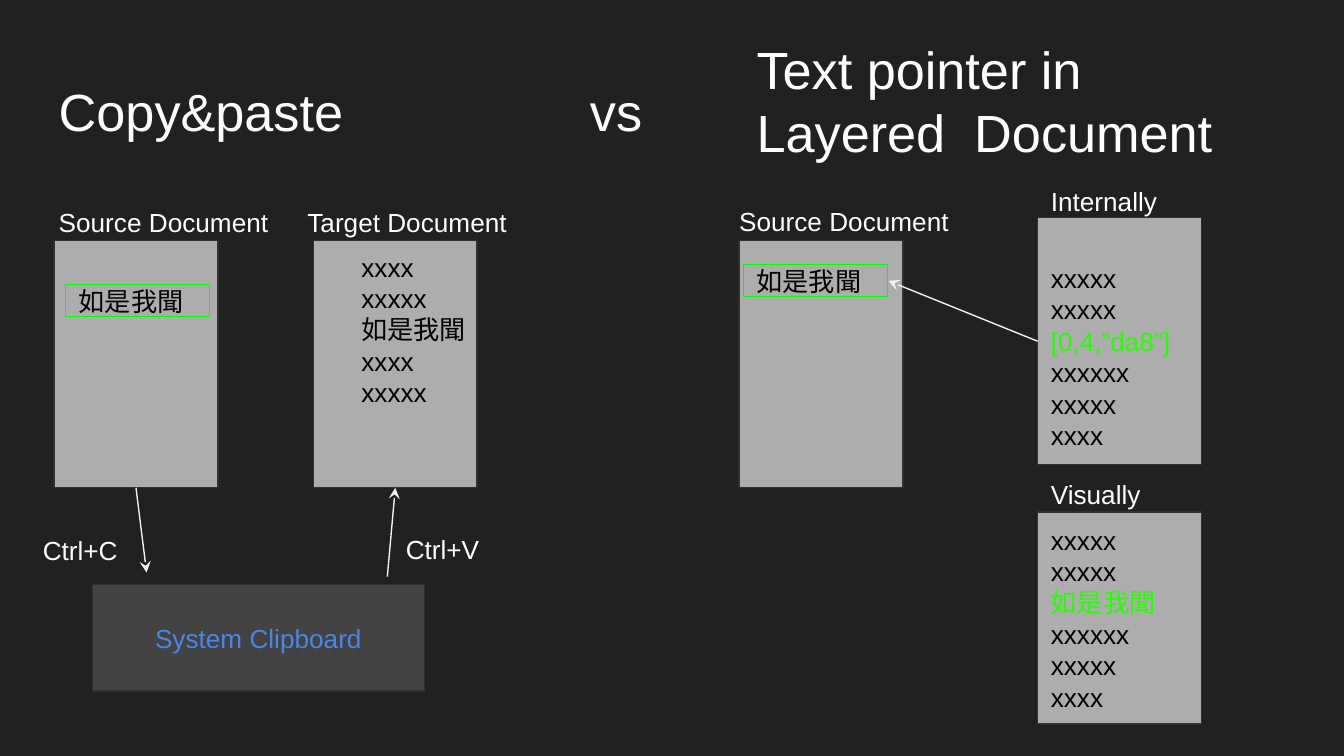
from typing import NamedTuple, Optional

from lxml.etree import SubElement
from pptx import Presentation
from pptx.dml.color import RGBColor
from pptx.enum.shapes import MSO_CONNECTOR, MSO_SHAPE
from pptx.enum.text import MSO_ANCHOR, MSO_AUTO_SIZE, PP_ALIGN
from pptx.oxml.ns import qn
from pptx.util import Cm, Pt

BACKGROUND = RGBColor(0x21, 0x21, 0x21)
WHITE = RGBColor(0xFF, 0xFF, 0xFF)
BLACK = RGBColor(0x00, 0x00, 0x00)
SHEET_GREY = RGBColor(0xAD, 0xAD, 0xAD)
PANEL_GREY = RGBColor(0x43, 0x43, 0x43)
EDGE_GREY = RGBColor(0x30, 0x30, 0x30)
ARROW_GREY = RGBColor(0xF3, 0xF3, 0xF3)
QUOTE_EDGE = RGBColor(0x00, 0xFF, 0x00)
QUOTE_GREEN = RGBColor(0x24, 0xFF, 0x00)
CLIPBOARD_BLUE = RGBColor(0x4A, 0x86, 0xE8)

FONT = "Arial"
INSET = 0.25
SHEET_WIDTH, SHEET_HEIGHT = 3.1, 4.67
QUOTE = "如是我聞"


class Line(NamedTuple):
    text: str
    color: RGBColor = BLACK


class Area(NamedTuple):
    """A rectangle in centimetres."""
    left: float
    top: float
    width: float
    height: float

    def lengths(self) -> list[Cm]:
        return [Cm(value) for value in self]


class Block(NamedTuple):
    """A filled rectangle with optional text."""
    area: Area
    lines: tuple[Line, ...] = ()
    fill: RGBColor = SHEET_GREY
    edge: RGBColor = EDGE_GREY
    align: PP_ALIGN = PP_ALIGN.LEFT
    inset_top: float = INSET
    inset_bottom: float = INSET


class Arrow(NamedTuple):
    start: tuple[float, float]
    end: tuple[float, float]


def write(box, lines: tuple[Line, ...], size: int = 14,
          anchor: MSO_ANCHOR = MSO_ANCHOR.TOP,
          align: PP_ALIGN = PP_ALIGN.LEFT,
          inset_top: float = INSET, inset_bottom: float = INSET) -> None:
    frame = box.text_frame
    frame.word_wrap = True
    frame.auto_size = MSO_AUTO_SIZE.NONE
    frame.vertical_anchor = anchor
    frame.margin_left = frame.margin_right = Cm(INSET)
    frame.margin_top, frame.margin_bottom = Cm(inset_top), Cm(inset_bottom)
    for index, line in enumerate(lines):
        para = frame.add_paragraph() if index else frame.paragraphs[0]
        para.alignment = align
        span = para.add_run()
        span.text = line.text
        span.font.name = FONT
        span.font.size = Pt(size)
        span.font.color.rgb = line.color


def add_text(page, area: Area, lines: tuple[Line, ...], size: int = 14,
             anchor: MSO_ANCHOR = MSO_ANCHOR.TOP) -> None:
    write(page.shapes.add_textbox(*area.lengths()), lines, size, anchor)


def add_block(page, block: Block) -> None:
    box = page.shapes.add_shape(MSO_SHAPE.RECTANGLE, *block.area.lengths())
    box.shadow.inherit = False
    box.fill.solid()
    box.fill.fore_color.rgb = block.fill
    box.line.color.rgb = block.edge
    box.line.width = Pt(0.75)
    if block.lines:
        write(box, block.lines, anchor=MSO_ANCHOR.MIDDLE, align=block.align,
              inset_top=block.inset_top, inset_bottom=block.inset_bottom)


def add_arrow(page, arrow: Arrow) -> None:
    ends = [Cm(value) for value in arrow.start + arrow.end]
    connector = page.shapes.add_connector(MSO_CONNECTOR.STRAIGHT, *ends)
    connector.line.color.rgb = ARROW_GREY
    connector.line.width = Pt(0.75)
    properties = connector._element.spPr
    SubElement(properties.find(qn("a:ln")), qn("a:tailEnd"), type="stealth")
    SubElement(properties, qn("a:effectLst"))


def add_title(page, area: Area, text: str, tab: float) -> None:
    title = page.shapes.title
    title.left, title.top, title.width, title.height = area.lengths()
    write(title, (Line(text, WHITE),), size=28)
    stops = SubElement(title.text_frame.paragraphs[0]._p.get_or_add_pPr(), qn("a:tabLst"))
    SubElement(stops, qn("a:tab"), pos=str(Cm(tab)), algn="l")


def sheet(left: float, top: float) -> Area:
    return Area(left, top, SHEET_WIDTH, SHEET_HEIGHT)


def pointer_lines(middle: str) -> tuple[Line, ...]:
    return (Line("xxxxx"), Line("xxxxx"), Line(middle, QUOTE_GREEN),
            Line("xxxxxx"), Line("xxxxx"), Line("xxxx"))


def quote(left: float, top: float) -> Block:
    return Block(Area(left, top, 2.72, 0.61), (Line(QUOTE),),
                 edge=QUOTE_EDGE, inset_top=0, inset_bottom=0)


BLOCKS = (
    # Copy and paste: source, target, quoted text, clipboard
    Block(sheet(1.02, 4.55)),
    Block(sheet(5.92, 4.55)),
    quote(1.24, 5.38),
    Block(Area(1.75, 11.05, 6.27, 2.01), (Line("System Clipboard", CLIPBOARD_BLUE),),
          fill=PANEL_GREY, align=PP_ALIGN.CENTER),
    # Text pointer: source, quoted text, internal and visual views
    Block(sheet(13.97, 4.55)),
    quote(14.05, 5.0),
    Block(sheet(19.61, 4.11), pointer_lines("[0,4,”da8”]"), inset_top=0.84),
    Block(Area(19.61, 9.68, SHEET_WIDTH, 4.01), pointer_lines(QUOTE)),
)

LABELS: tuple[tuple[str, Area], ...] = (
    ("Source Document", Area(0.86, 3.66, 5.97, 0.89)),
    ("Target Document", Area(5.56, 3.66, 6.27, 1.12)),
    ("Source Document", Area(13.72, 3.63, 4.67, 0.89)),
    ("Internally", Area(19.61, 3.25, 5.03, 0.89)),
    ("Visually", Area(19.61, 8.79, 5.03, 0.89)),
    ("Ctrl+C", Area(0.56, 9.86, 3.4, 0.61)),
    ("Ctrl+V", Area(7.42, 9.83, 3.4, 0.61)),
)

ARROWS = (
    Arrow((19.61, 6.45), (16.79, 5.31)),
    Arrow((2.57, 9.22), (2.77, 10.82)),
    Arrow((7.32, 10.9), (7.47, 9.22)),
)


def main() -> None:
    deck = Presentation()
    deck.slide_width, deck.slide_height = Cm(25.4), Cm(14.29)
    page = deck.slides.add_slide(deck.slide_layouts[5])
    page.background.fill.solid()
    page.background.fill.fore_color.rgb = BACKGROUND

    # Headings of the two halves
    add_title(page, Area(0.86, 1.24, 12.14, 1.6), "Copy&paste\tvs", tab=10.04)
    add_text(page, Area(14.05, 0.46, 15.06, 1.6),
             (Line("Text pointer in", WHITE), Line("Layered  Document", WHITE)), size=28)

    # Documents, their captions and the target's content
    for block in BLOCKS:
        add_block(page, block)
    for text, area in LABELS:
        add_text(page, area, (Line(text, WHITE),))
    add_text(page, Area(6.58, 4.45, 3.1, 3.55),
             (Line("xxxx"), Line("xxxxx"), Line(QUOTE + "xxxx"), Line("xxxxx")),
             anchor=MSO_ANCHOR.MIDDLE)

    # Flow of the text
    for arrow in ARROWS:
        add_arrow(page, arrow)

    deck.save("out.pptx")


if __name__ == "__main__":
    main()
